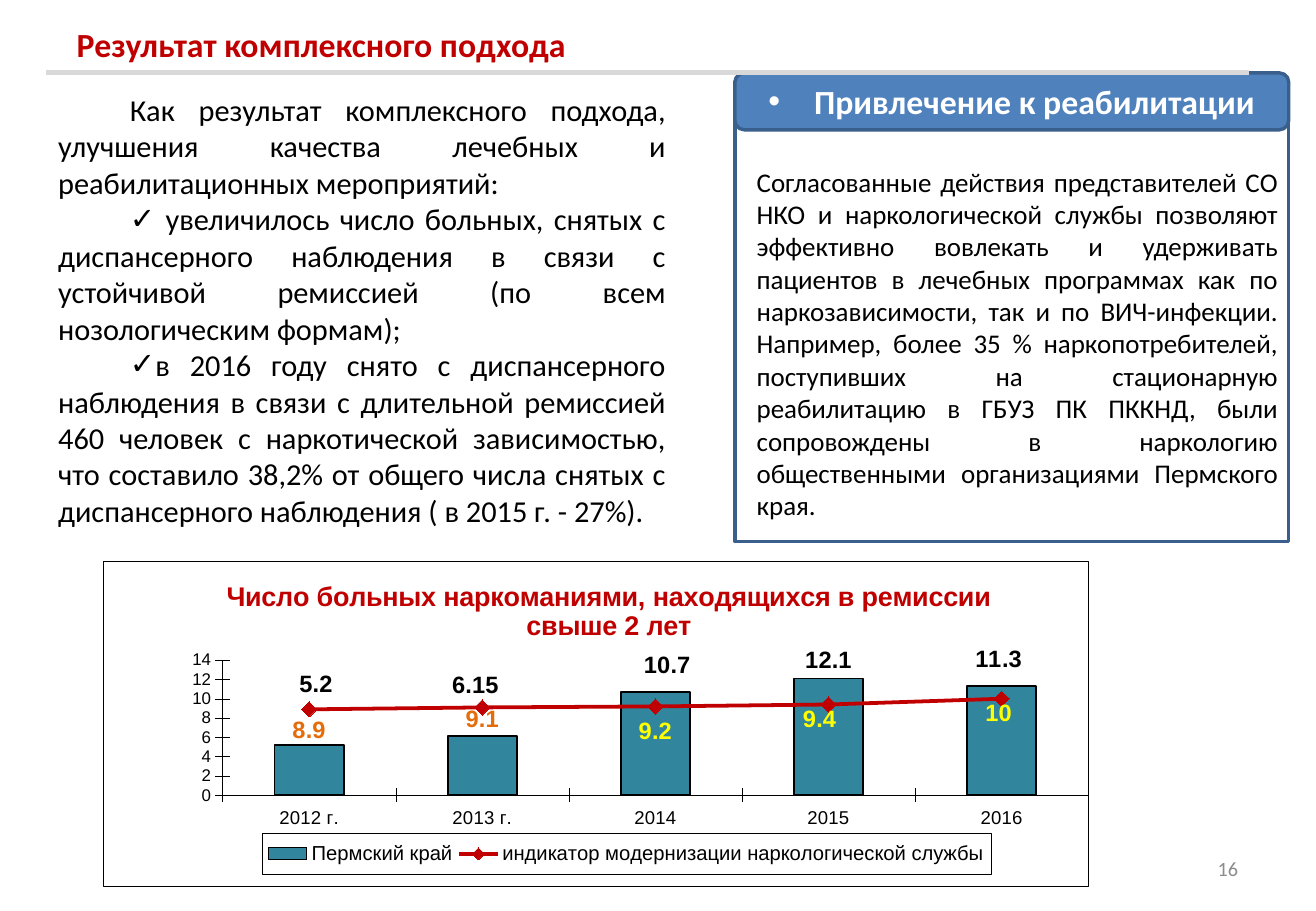
"""Build the slide on the results of the combined approach to rehabilitation."""
from dataclasses import dataclass

from lxml import etree
from pptx import Presentation
from pptx import util as u
from pptx.chart import data as cd
from pptx.dml import color as dc
from pptx.enum import chart as ch, shapes, text
from pptx.oxml import ns

COLORS = {"red": "C00000", "black": "000000", "white": "FFFFFF", "blue": "4F81BD",
          "edge": "3A5F8C", "rule": "D9D9D9", "page": "8C8C8C", "teal": "31859C",
          "orange": "E46C0A", "yellow": "FFFF00"}
CHART_W, CHART_H = 584, 193
C15 = "http://schemas.microsoft.com/office/drawing/2012/chart"
YEARS = ["2012 г.", "2013 г.", "2014", "2015", "2016"]
ALIGN = text.PP_ALIGN


@dataclass
class Box:
    left: float
    top: float
    width: float
    height: float


@dataclass
class Para:
    words: str
    size: float
    color: str = "black"
    bold: bool = False
    align: ALIGN = ALIGN.LEFT
    margin: float = 0
    indent: float = 0
    bullet: str = ""


@dataclass
class Measure:
    name: str
    values: list[float]
    position: ch.XL_LABEL_POSITION
    label_colors: list[str]
    shifts: list[tuple[float, float]]


BODY = {"size": 18, "align": ALIGN.JUSTIFY, "indent": 42.5}
RESULTS = [
    Para("Как результат комплексного подхода, улучшения качества лечебных и "
         "реабилитационных мероприятий:", **BODY),
    Para(" увеличилось число больных, снятых с диспансерного наблюдения в связи с "
         "устойчивой ремиссией (по всем нозологическим формам); ", bullet="✓", **BODY),
    Para("в 2016 году снято с диспансерного наблюдения в связи с длительной ремиссией "
         "460 человек с наркотической зависимостью, что составило 38,2% от общего числа "
         "снятых с диспансерного наблюдения ( в 2015 г. - 27%).", bullet="✓", **BODY),
]
COOPERATION = Para(
    "Согласованные действия представителей СО НКО и наркологической службы позволяют "
    "эффективно вовлекать и удерживать пациентов в лечебных программах как по "
    "наркозависимости, так и по ВИЧ-инфекции. Например, более 35 % наркопотребителей, "
    "поступивших на стационарную реабилитацию в ГБУЗ ПК ПККНД, были сопровождены в "
    "наркологию общественными организациями Пермского края.", 16, align=ALIGN.JUSTIFY)
REGION = Measure("Пермский край", [5.2, 6.15, 10.7, 12.1, 11.3],
                 ch.XL_LABEL_POSITION.OUTSIDE_END, ["black"] * 5,
                 [(4, -25.5), (-4, -19.5), (7, -5), (0, 0), (-2, -5.5)])
INDICATOR = Measure("индикатор модернизации наркологической службы",
                    [8.9, 9.1, 9.2, 9.4, 10], ch.XL_LABEL_POSITION.BELOW,
                    ["orange"] * 2 + ["yellow"] * 3,
                    [(0, -3), (0, -8), (0, -0.5), (-5, -6.5), (-2, -6.5)])


def rgb(name: str) -> dc.RGBColor:
    return dc.RGBColor.from_string(COLORS[name])


def style(obj, **values) -> None:
    for name, value in values.items():
        setattr(obj, name, value)


def style_font(font, size: float, color: str, bold: bool = False, name: str = "Arial") -> None:
    style(font, size=u.Pt(size), bold=bold, name=name)
    font.color.rgb = rgb(color)


def style_line(line, color: str, width: float) -> None:
    line.color.rgb = rgb(color)
    line.width = u.Pt(width)


def place(box: Box) -> list[u.Length]:
    return [u.Pt(v) for v in (box.left, box.top, box.width, box.height)]


def child(parent, tag: str, **attrs):
    return etree.SubElement(parent, ns.qn(tag), attrs)


def write(tf, paras: list[Para], anchor=text.MSO_ANCHOR.TOP,
          auto_size=text.MSO_AUTO_SIZE.NONE) -> None:
    style(tf, word_wrap=True, vertical_anchor=anchor, auto_size=auto_size)
    for i, para in enumerate(paras):
        p = tf.add_paragraph() if i else tf.paragraphs[0]
        p.alignment = para.align
        r = p.add_run()
        r.text = para.words
        style_font(r.font, para.size, para.color, para.bold, "Calibri")
        pr = p._p.get_or_add_pPr()
        pr.set("marL", str(u.Pt(para.margin)))
        pr.set("indent", str(u.Pt(para.indent)))
        if para.bullet:
            child(pr, "a:buFont", typeface="Arial")
            child(pr, "a:buChar", char=para.bullet)


def add_text(sps, box: Box, paras: list[Para], **frame) -> None:
    write(sps.add_textbox(*place(box)).text_frame, paras, **frame)


def add_panel(sps, kind: shapes.MSO_SHAPE, box: Box, fill: str = ""):
    sp = sps.add_shape(kind, *place(box))
    sp.shadow.inherit = False
    if fill:
        sp.fill.solid()
        sp.fill.fore_color.rgb = rgb(fill)
    else:
        sp.fill.background()
    style_line(sp.line, "edge", 2)
    return sp


def manual_layout(**values):
    layout = etree.Element(ns.qn("c:layout"))
    inner = child(layout, "c:manualLayout")
    for name, value in values.items():
        child(inner, f"c:{name}", val=str(value))
    return layout


def set_layout(parent, index: int, **values) -> None:
    for old in parent.findall(ns.qn("c:layout")):
        parent.remove(old)
    parent.insert(index, manual_layout(xMode="edge", yMode="edge", **values))


def add_border(after, fill: str = "") -> None:
    sppr = etree.Element(ns.qn("c:spPr"))
    if fill:
        child(child(sppr, "a:solidFill"), "a:srgbClr", val=COLORS[fill])
    ln = child(sppr, "a:ln", w=str(u.Pt(0.25)))
    child(child(ln, "a:solidFill"), "a:srgbClr", val=COLORS["black"])
    after.addnext(sppr)


def move_to_line(chart) -> None:
    bar = chart.plots[0]._element
    ser = bar.findall(ns.qn("c:ser"))[1]
    for flag in ser.findall(ns.qn("c:invertIfNegative")):
        ser.remove(flag)
    line = etree.Element(ns.qn("c:lineChart"))
    bar.addnext(line)
    child(line, "c:grouping", val="standard")
    child(line, "c:varyColors", val="0")
    line.append(ser)
    child(line, "c:marker", val="1")
    for axis in bar.findall(ns.qn("c:axId")):
        child(line, "c:axId", val=axis.get("val"))


def add_labels(series, measure: Measure) -> None:
    for i, (color, (dx, dy)) in enumerate(zip(measure.label_colors, measure.shifts)):
        label = series.points[i].data_label
        style_font(label.font, 14, color, True)
        label.position = measure.position
        label._get_or_add_dLbl().insert(
            1, manual_layout(x=round(dx / CHART_W, 3), y=round(dy / CHART_H, 3)))
    labels = series._element.find(ns.qn("c:dLbls"))
    for leader in labels.findall(ns.qn("c:showLeaderLines")):
        leader.set("val", "0")
    ext = child(child(labels, "c:extLst"), "c:ext", uri="{CE6537A1-D6FC-4f65-9D91-7224C49458BB}")
    etree.SubElement(ext, f"{{{C15}}}showLeaderLines", {"val": "0"}, nsmap={"c15": C15})


def add_remission_chart(sps) -> None:
    data = cd.CategoryChartData()
    data.categories = YEARS
    for measure in (REGION, INDICATOR):
        data.add_series(measure.name, measure.values)
    chart = sps.add_chart(ch.XL_CHART_TYPE.COLUMN_CLUSTERED,
                          *place(Box(61.2, 332.6, CHART_W, CHART_H)), data).chart
    style_font(chart.font, 10, "black")
    title = chart.chart_title
    title.text_frame.text = "Число больных наркоманиями, находящихся в ремиссии свыше 2 лет"
    style_font(title.text_frame.paragraphs[0].runs[0].font, 16, "red", True)
    title.include_in_layout = False
    set_layout(title._element, 1, x=0.12, y=0.04)
    for axis, size in ((chart.category_axis, 11), (chart.value_axis, 10)):
        style(axis, has_major_gridlines=False, major_tick_mark=ch.XL_TICK_MARK.CROSS)
        style_font(axis.tick_labels.font, size, "black")
        style_line(axis.format.line, "black", 0.25)
    style(chart.value_axis, minimum_scale=0, maximum_scale=14, major_unit=2)
    move_to_line(chart)
    bars, line = chart.plots
    style(bars, gap_width=150, vary_by_categories=False)
    columns, trend = bars.series[0], line.series[0]
    trend.smooth = False
    style(trend.marker, style=ch.XL_MARKER_STYLE.DIAMOND, size=9)
    for fmt, fill, edge, width in ((columns.format, "teal", "black", 1),
                                   (trend.marker.format, "red", "red", 0.75)):
        fmt.fill.solid()
        fmt.fill.fore_color.rgb = rgb(fill)
        style_line(fmt.line, edge, width)
    style_line(trend.format.line, "red", 2.25)
    add_labels(columns, REGION)
    add_labels(trend, INDICATOR)
    chart.has_legend = True
    legend = chart.legend
    style(legend, position=ch.XL_LEGEND_POSITION.BOTTOM, include_in_layout=False)
    style_font(legend.font, 12, "black")
    set_layout(legend._element, 1, x=0.161, y=0.837, w=0.74, h=0.126)
    add_border(legend._element.find(ns.qn("c:overlay")))
    area = bars._element.getparent()
    set_layout(area, 0, x=0.121, y=0.304, w=0.879, h=0.416)
    area[0][0].insert(0, etree.Element(ns.qn("c:layoutTarget"), {"val": "inner"}))
    add_border(area.getparent(), "white")


def main() -> None:
    prs = Presentation()
    style(prs, slide_width=u.Pt(780), slide_height=u.Pt(540))
    s = prs.slides.add_slide(prs.slide_layouts[5])
    sps, middle = s.shapes, text.MSO_ANCHOR.MIDDLE
    grow = text.MSO_AUTO_SIZE.SHAPE_TO_FIT_TEXT
    style(sps.title, **dict(zip(("left", "top", "width", "height"),
                                place(Box(38.2, 9.4, 702, 33.1)))))
    write(sps.title.text_frame, [Para("Результат комплексного подхода", 20, "red", True)], middle)
    add_text(sps, Box(558.7, 500.4, 182.2, 28.8),
             [Para("16", 12, "page", align=ALIGN.RIGHT)], anchor=middle)
    panel = sps.add_group_shape().shapes
    add_panel(panel, shapes.MSO_SHAPE.RECTANGLE, Box(435.6, 48.2, 328.3, 272.9))
    header = add_panel(panel, shapes.MSO_SHAPE.ROUNDED_RECTANGLE,
                       Box(435.6, 43.2, 328.3, 33.8), "blue")
    write(header.text_frame, [Para("Привлечение к реабилитации", 20, "white", True,
                                   ALIGN.CENTER, 27, -27, "•")], middle)
    rule = sps.add_connector(shapes.MSO_CONNECTOR.STRAIGHT,
                             *(u.Pt(v) for v in (27.4, 43.2, 740.2, 43.2)))
    style_line(rule.line, "rule", 3)
    child(rule._element.spPr, "a:effectLst")
    add_text(sps, Box(441.4, 94.3, 323.3, 220.3), [COOPERATION], auto_size=grow)
    add_text(sps, Box(27.4, 49, 374.4, 269.3), RESULTS, anchor=middle, auto_size=grow)
    add_remission_chart(sps)
    prs.save("out.pptx")


if __name__ == "__main__":
    main()
